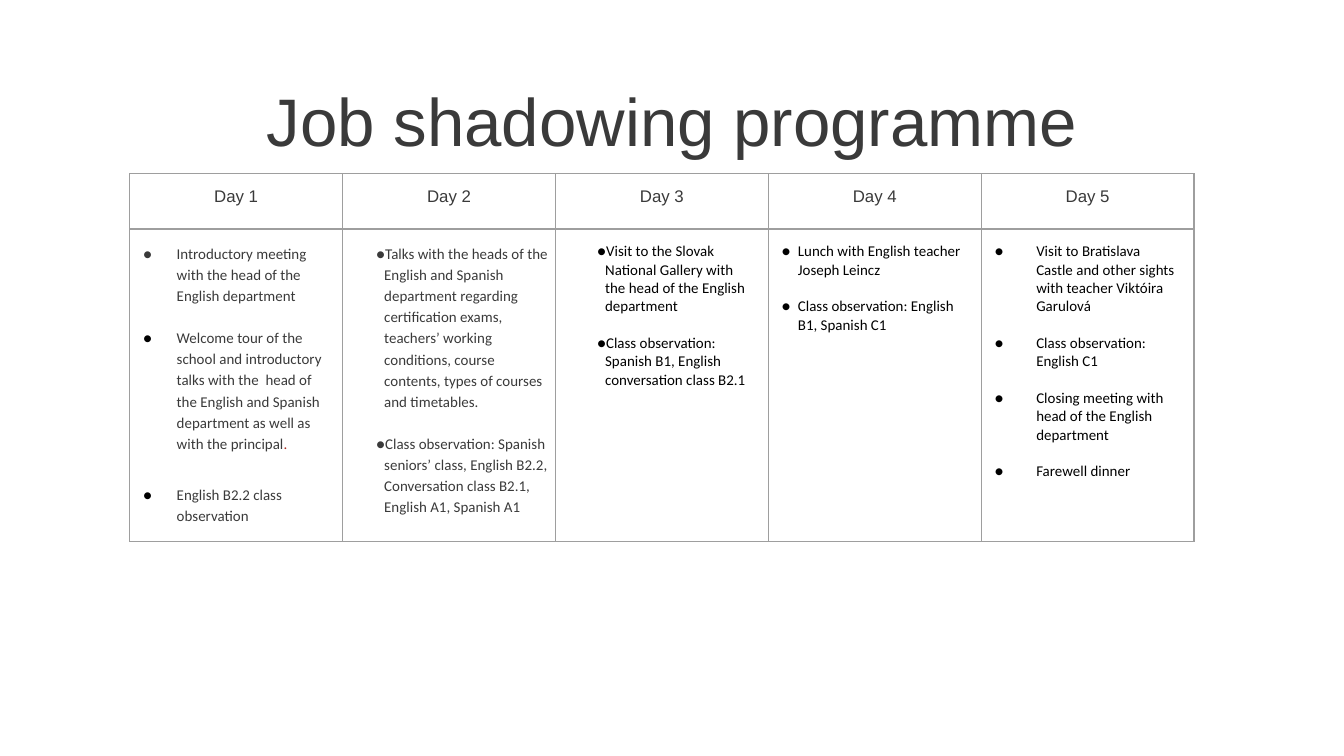
from lxml.etree import SubElement as Sub, Element
from pptx import Presentation as Deck
from pptx.dml.color import RGBColor as Rgb
from pptx.enum.text import PP_ALIGN as Align
from pptx.oxml.ns import qn
from pptx.util import Inches as In, Pt

WIDE = In(10)
HIGH = WIDE * 9 // 16
GREY, BLACK, RED, LINE = "3A3A3A", "000000", "A7291E", "9E9E9E"
DAYS = [
    dict(pad=(0.1, 0.1), left=0.25, hang=0.31, lead=1.15, ink=GREY, gaps=(0, 11.2, 16),
         dots=(GREY, BLACK, BLACK), items=[
             ["Introductory meeting with the head of the English department"],
             ["Welcome tour of the school and introductory talks with the  head of the "
              "English and Spanish department as well as with the principal", "."],
             ["English B2.2 class observation"]]),
    dict(pad=(0.25, 0.02), left=0.06, hang=0.31, lead=1.15, ink=GREY, gaps=(0, 11.2),
         dots=(GREY,) * 2, items=[
             ["Talks with the heads of the English and Spanish department regarding "
              "certification exams, teachers’ working conditions, course contents, "
              "types of courses and timetables."],
             ["Class observation: Spanish seniors’ class, English B2.2, "
              "Conversation class B2.1, English A1, Spanish A1"]]),
    dict(pad=(0.31, 0.1), left=0.06, hang=0.31, lead=1, ink=BLACK, gaps=(0, 9.8),
         dots=(BLACK,) * 2, items=[
             ["Visit to the Slovak National Gallery with the head of the English department"],
             ["Class observation: Spanish B1, English conversation class B2.1"]]),
    dict(pad=(0.1, 0.1), left=0.12, hang=0.12, lead=1, ink=BLACK, gaps=(0, 9.8),
         dots=(BLACK,) * 2, items=[
             ["Lunch with English teacher Joseph Leincz"],
             ["Class observation: English B1, Spanish C1"]]),
    dict(pad=(0.1, 0.1), left=0.31, hang=0.31, lead=1, ink=BLACK, gaps=(0, 9.8, 9.8, 9.8),
         dots=(BLACK,) * 4, items=[
             ["Visit to Bratislava Castle and other sights with teacher Viktóira Garulová"],
             ["Class observation: English C1"],
             ["Closing meeting with head of the English department"],
             ["Farewell dinner"]]),
]


def area(left, top, wide, high):
    """Turn percentages of the slide into lengths."""
    return tuple(int(part * full / 100) for part, full in
                 zip((left, top, wide, high), (WIDE, HIGH) * 2))


def tint(font, code):
    """Colour a font from a hex string."""
    font.color.rgb = Rgb.from_string(code)


def style(para, face, size, code):
    """Set the font of a paragraph."""
    para.font.name, para.font.size = face, Pt(size)
    tint(para.font, code)


def bullet(para, code, left, hang):
    """Give a paragraph a coloured dot and a hanging indent."""
    props = para._p.get_or_add_pPr()
    props.set("marL", str(In(left)))
    props.set("indent", str(-In(hang)))
    Sub(Sub(props, qn("a:buClr")), qn("a:srgbClr"), val=code)
    Sub(props, qn("a:buSzPts"), val="800")
    Sub(props, qn("a:buFont"), typeface="Calibri")
    Sub(props, qn("a:buChar"), char="●")


def frame(cell, pad):
    """Clear a cell's fill, pad it and draw its four borders."""
    cell.margin_left, cell.margin_right = map(In, pad)
    cell.margin_top = cell.margin_bottom = In(0.1)
    cell.fill.background()
    props = cell._tc.get_or_add_tcPr()
    for spot, side in enumerate("LRTB"):
        edge = Element(qn("a:ln" + side), w=str(Pt(0.75)))
        Sub(Sub(edge, qn("a:solidFill")), qn("a:srgbClr"), val=LINE)
        props.insert(spot, edge)


def head(cell, num):
    """Fill a header cell."""
    frame(cell, (0.1, 0.1))
    para = cell.text_frame.paragraphs[0]
    para.text, para.alignment = f"Day {num}", Align.CENTER
    style(para, "Arial", 9, GREY)


def plan(cell, day):
    """Fill a cell with the bulleted plan of one day."""
    frame(cell, day["pad"])
    text = cell.text_frame
    for spot, (item, dot, gap) in enumerate(zip(day["items"], day["dots"], day["gaps"])):
        para = text.add_paragraph() if spot else text.paragraphs[0]
        para.line_spacing = day["lead"]
        if gap:
            para.space_before = Pt(gap)
        bullet(para, dot, day["left"], day["hang"])
        style(para, "Calibri", 8, day["ink"])
        for part in item:
            run = para.add_run()
            run.text = part
            if part == ".":
                tint(run.font, RED)


def title(slide, box):
    """Place the heading."""
    text = slide.shapes.add_textbox(*box).text_frame
    text.word_wrap = True
    text.margin_left = text.margin_right = In(0.1)
    text.margin_top = text.margin_bottom = In(0.1)
    para = text.paragraphs[0]
    para.text, para.alignment = "Job shadowing programme", Align.CENTER
    style(para, "Arial", 36, GREY)


def week(slide, box):
    """Place the table of days."""
    grid = slide.shapes.add_table(2, len(DAYS), *box).table
    grid.rows[0].height = int(box[3] * 0.15)
    grid.rows[1].height = box[3] - grid.rows[0].height
    for col, day in enumerate(DAYS):
        head(grid.cell(0, col), col + 1)
        plan(grid.cell(1, col), day)


def main():
    """Build and save the slide."""
    deck = Deck()
    deck.slide_width, deck.slide_height = WIDE, HIGH
    slide = deck.slides.add_slide(deck.slide_layouts[6])
    title(slide, area(7.8, 8.7, 84.4, 11.2))
    week(slide, area(9.65, 23, 79.2, 48.6))
    deck.save("out.pptx")


if __name__ == "__main__":
    main()
